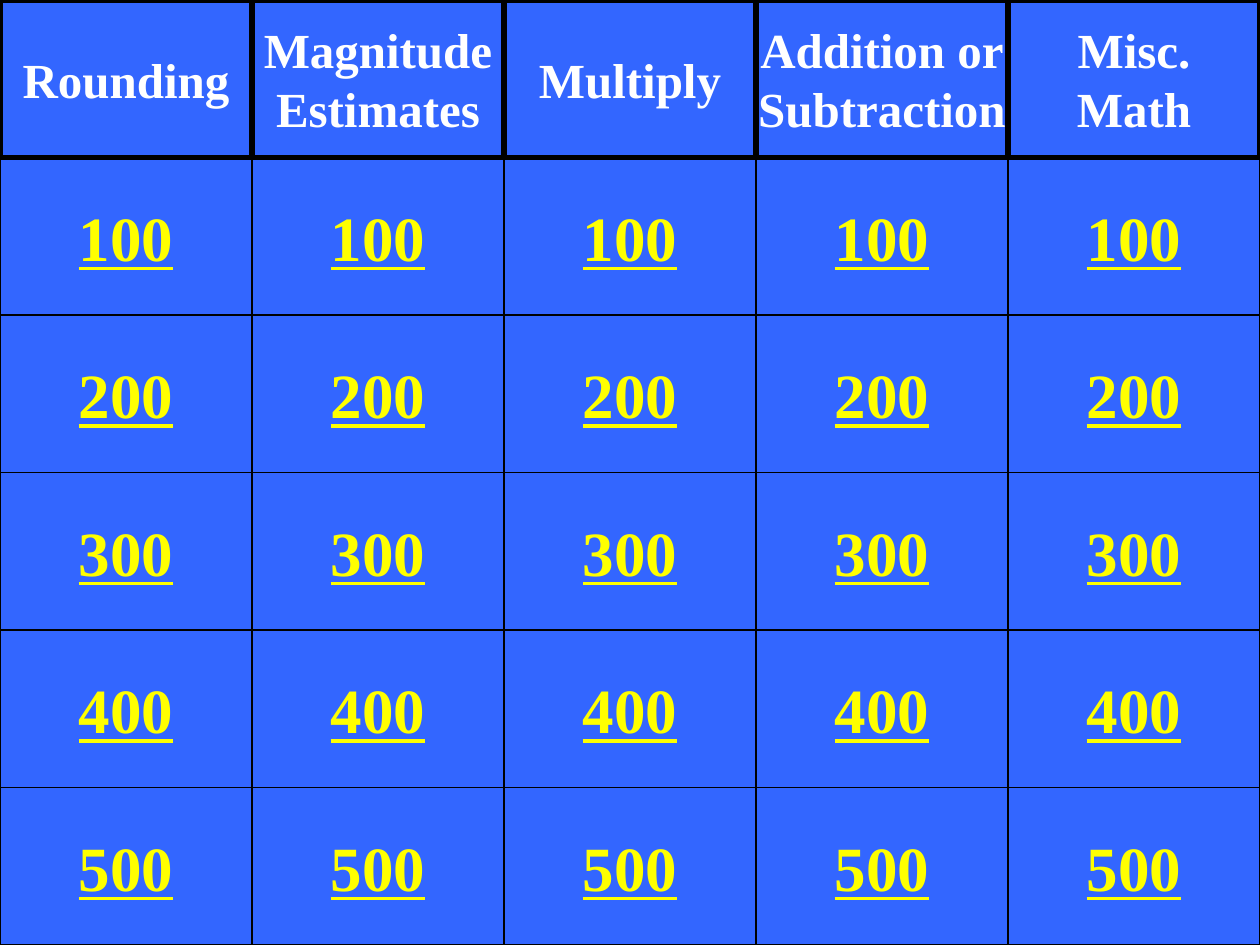
from pptx import Presentation
from pptx.dml.color import RGBColor
from pptx.enum.shapes import MSO_SHAPE
from pptx.enum.text import MSO_ANCHOR, PP_ALIGN
from pptx.util import Inches, Pt

RECT = MSO_SHAPE.RECTANGLE
BUTTON = MSO_SHAPE.ACTION_BUTTON_CUSTOM
MIDDLE = MSO_ANCHOR.MIDDLE
CENTER = PP_ALIGN.CENTER

BLUE, BLACK, WHITE, YELLOW = "3366FF", "000000", "FFFFFF", "FFFF00"
FONT = "Times New Roman"
WIDE, HIGH = 2, 1.25
TOPICS = ["Rounding", "Magnitude\nEstimates", "Multiply",
          "Addition or\nSubtraction", "Misc.\nMath"]
POINTS = [100, 200, 300, 400, 500]


def paint(part, color):
    part.solid()
    part.fore_color.rgb = RGBColor.from_string(color)


def add_cell(text, col, row, kind, size, color, line, under=None):
    """Place one board cell by grid position; each text line is a paragraph."""
    cell = slide.shapes.add_shape(kind, Inches(col * WIDE), Inches(row * HIGH),
                                  Inches(WIDE), Inches(HIGH))
    cell.shadow.inherit = False
    paint(cell.fill, BLUE)
    paint(cell.line.fill, BLACK)
    cell.line.width = Pt(line)
    frame = cell.text_frame
    frame.text = text
    frame.word_wrap = False
    frame.vertical_anchor = MIDDLE
    for para in frame.paragraphs:
        para.alignment = CENTER
        font = para.runs[0].font
        font.name, font.size = FONT, Pt(size)
        font.bold, font.underline = True, under
        paint(font.fill, color)


deck = Presentation()
deck.slide_width, deck.slide_height = Inches(10), Inches(7.5)
slide = deck.slides.add_slide(deck.slide_layouts[6])
paint(slide.background.fill, BLUE)

for col in range(len(TOPICS)):
    for row, score in enumerate(POINTS, start=1):
        add_cell(str(score), col, row, BUTTON, size=36, color=YELLOW,
                 line=0.75, under=True)

# Topics come last so their heavy borders lie over the buttons
for col, topic in enumerate(TOPICS):
    add_cell(topic, col, 0, RECT, size=28, color=WHITE, line=3)

deck.save("out.pptx")
